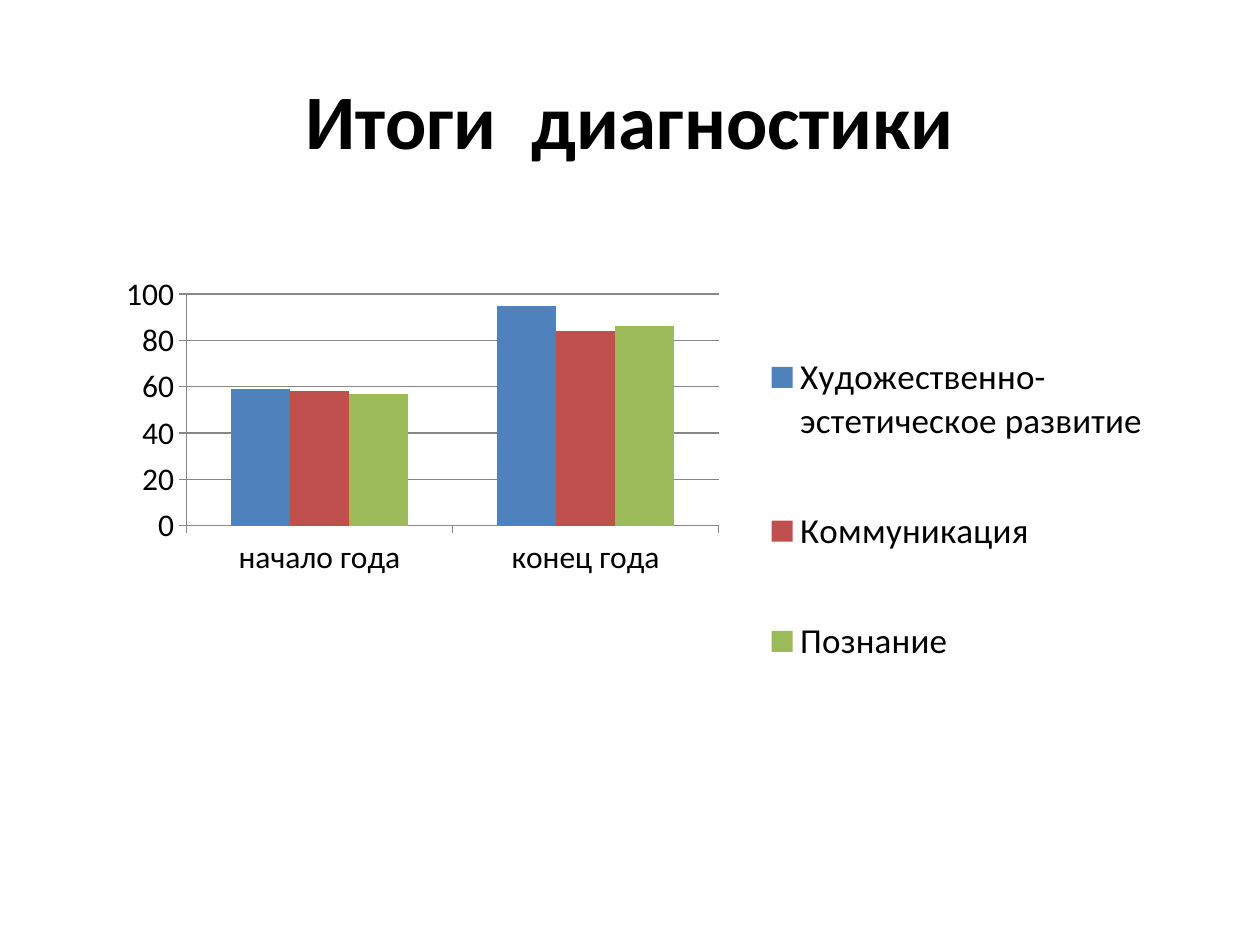
from dataclasses import dataclass

from pptx import Presentation
from pptx.chart.data import CategoryChartData
from pptx.dml.color import RGBColor
from pptx.enum.chart import XL_CHART_TYPE as ChartType
from pptx.enum.chart import XL_LEGEND_POSITION as LegendPos
from pptx.enum.chart import XL_TICK_MARK as Tick
from pptx.enum.text import MSO_ANCHOR, PP_ALIGN
from pptx.oxml import parse_xml
from pptx.oxml.ns import nsdecls
from pptx.util import Inches, Pt


@dataclass(frozen=True)
class Theme:
    font: str = "Calibri"
    text: str = "000000"
    grid: str = "878787"
    series: tuple = ("4F81BD", "C0504D", "9BBB59")
    title_size: float = 44
    axis_size: float = 18
    legend_size: float = 20


THEME = Theme()
WIDTH, HEIGHT = Inches(10), Inches(7.5)

PERIODS = ("начало года", "конец года")
RESULTS = {
    "Художественно-эстетическое развитие": (59, 95),
    "Коммуникация": (58, 84),
    "Познание": (57, 86),
}


def share(x, y, w, h):
    """Turn shares of the slide's size into a left, top, width, height box."""
    return int(x * WIDTH), int(y * HEIGHT), int(w * WIDTH), int(h * HEIGHT)


def rgb(color):
    return RGBColor.from_string(color)


def style_font(font, size, bold=False):
    font.name, font.size, font.bold = THEME.font, Pt(size), bold
    font.color.rgb = rgb(THEME.text)


def style_line(line):
    line.color.rgb = rgb(THEME.grid)
    line.width = Pt(0.75)


def add_title(s, text, box):
    tf = s.shapes.add_textbox(*box).text_frame
    tf.word_wrap = True
    tf.vertical_anchor = MSO_ANCHOR.MIDDLE
    tf.margin_bottom = Inches(0.64)
    p = tf.paragraphs[0]
    p.alignment = PP_ALIGN.CENTER
    r = p.add_run()
    r.text = text
    style_font(r.font, THEME.title_size, bold=True)


def set_layout(element, x, y, w, h, inner=False):
    """Fix a plot area or legend at shares of the chart's size."""
    target = '<c:layoutTarget val="inner"/>' if inner else ""
    sizes = "".join(f'<c:{tag} val="{value}"/>'
                    for tag, value in zip("xywh", (x, y, w, h)))
    layout = parse_xml(
        f'<c:layout {nsdecls("c")}><c:manualLayout>{target}'
        f'<c:xMode val="edge"/><c:yMode val="edge"/>{sizes}'
        '</c:manualLayout></c:layout>')
    for old in element.findall(layout.tag):
        element.remove(old)
    element.insert(0 if inner else 1, layout)


def style_axes(chart):
    for axis in (chart.category_axis, chart.value_axis):
        axis.major_tick_mark = Tick.OUTSIDE
        axis.minor_tick_mark = Tick.NONE
        style_line(axis.format.line)
        style_font(axis.tick_labels.font, THEME.axis_size)
    values = chart.value_axis
    values.minimum_scale, values.maximum_scale, values.major_unit = 0, 100, 20
    values.has_major_gridlines = True
    style_line(values.major_gridlines.format.line)


def add_legend(chart):
    chart.has_legend = True
    legend = chart.legend
    legend.position = LegendPos.RIGHT
    legend.include_in_layout = False
    style_font(legend.font, THEME.legend_size)
    set_layout(legend._element, 0.62, 0.15, 0.35, 0.82)


def add_column_chart(s, box):
    data = CategoryChartData()
    data.categories = PERIODS
    for name, values in RESULTS.items():
        data.add_series(name, values)
    chart = s.shapes.add_chart(ChartType.COLUMN_CLUSTERED, *box, data).chart
    chart.has_title = False
    style_font(chart.font, THEME.axis_size)
    plot = chart.plots[0]
    plot.vary_by_categories = False
    plot.gap_width, plot.overlap = 150, 0
    for series, color in zip(plot.series, THEME.series):
        series.format.fill.solid()
        series.format.fill.fore_color.rgb = rgb(color)
    style_axes(chart)
    add_legend(chart)
    plot_area = chart._chartSpace.chart.plotArea
    set_layout(plot_area, 0.1, 0.16, 0.48, 0.43, inner=True)


def main():
    prs = Presentation()
    prs.slide_width, prs.slide_height = WIDTH, HEIGHT
    s = prs.slides.add_slide(prs.slide_layouts[6])
    add_title(s, "Итоги  диагностики", share(0.05, 0.07, 0.9, 0.19))
    add_column_chart(s, share(0.06, 0.22, 0.88, 0.57))
    prs.save("out.pptx")


if __name__ == "__main__":
    main()
